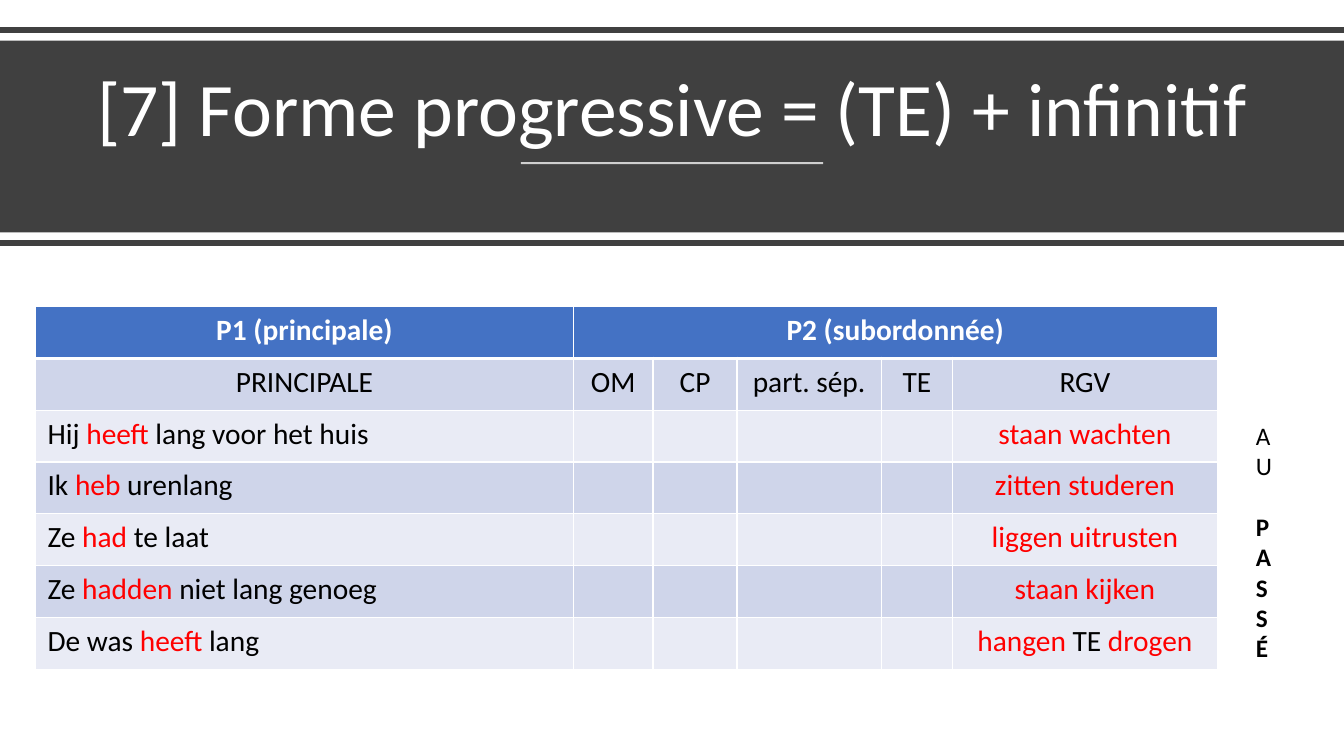
from lxml import etree
from pptx import Presentation
from pptx.dml.color import RGBColor
from pptx.enum import shapes, text
from pptx.oxml import ns
from pptx.util import Pt

FONT = "Calibri"
COLORS = {
    "white": "FFFFFF", "black": "000000", "dark": "404040", "red": "FF0000",
    "head": "4472C4", "odd": "CFD5EA", "even": "E9EBF5",
}
WIDTH, HEIGHT = 960, 540
COLS = [384, 57, 60, 103, 51, 189]
ROW = 37
HEADS = ["PRINCIPALE", "OM", "CP", "part. sép.", "TE", "RGV"]
# Words between asterisks are red.
PAIRS = [
    ("Hij *heeft* lang voor het huis", "*staan wachten*"),
    ("Ik *heb* urenlang", "*zitten studeren*"),
    ("Ze *had* te laat", "*liggen uitrusten*"),
    ("Ze *hadden* niet lang genoeg", "*staan kijken*"),
    ("De was *heeft* lang", "*hangen *TE *drogen*"),
]


def rgb(name):
    return RGBColor.from_string(COLORS[name])


def style(run, size, color, bold=False):
    font = run.font
    font.name, font.size, font.bold = FONT, Pt(size), bold
    font.color.rgb = rgb(color)


def add_band(slide, top, height):
    band = slide.shapes.add_shape(
        shapes.MSO_SHAPE.RECTANGLE, 0, Pt(top), Pt(WIDTH), Pt(height))
    band.shadow.inherit = False
    band.fill.solid()
    band.fill.fore_color.rgb = rgb("dark")
    band.line.fill.background()


def add_rule(slide, left, right, y, color, weight, alpha=None):
    """Draw a level line; alpha is its opacity in percent."""
    rule = slide.shapes.add_connector(
        shapes.MSO_CONNECTOR.STRAIGHT, Pt(left), Pt(y), Pt(right), Pt(y))
    rule.line.color.rgb = rgb(color)
    rule.line.width = Pt(weight)
    props = rule._element.spPr
    if alpha:
        tone = props.find(".//" + ns.qn("a:srgbClr"))
        etree.SubElement(tone, ns.qn("a:alpha"), val=str(alpha * 1000))
    etree.SubElement(props, ns.qn("a:effectLst"))


def add_text(slide, box, lines):
    """Add a text box; each line is (words, size, color, bold)."""
    frame = slide.shapes.add_textbox(*map(Pt, box)).text_frame
    frame.word_wrap = True
    frame.text = "\n".join(line[0] for line in lines)
    for para, line in zip(frame.paragraphs, lines):
        style(para.runs[0], *line[1:])
    return frame


def set_edges(cell, base):
    props = cell._tc.get_or_add_tcPr()
    for side, weight in zip("LRTB", (1, 1, 1, base)):
        edge = etree.SubElement(
            props, ns.qn("a:ln" + side), w=str(Pt(weight)))
        fill = etree.SubElement(edge, ns.qn("a:solidFill"))
        etree.SubElement(fill, ns.qn("a:srgbClr"), val=COLORS["white"])


def fill_cell(cell, words, row, col):
    head = row == 0
    set_edges(cell, 3 if head else 1)
    cell.fill.solid()
    cell.fill.fore_color.rgb = rgb(
        "head" if head else "odd" if row % 2 else "even")
    cell.margin_left = cell.margin_right = Pt(8.5)
    cell.margin_top = cell.margin_bottom = Pt(4.25)
    para = cell.text_frame.paragraphs[0]
    left = col == 0 and row > 1
    para.alignment = text.PP_ALIGN.LEFT if left else text.PP_ALIGN.CENTER
    plain = "white" if head else "black"
    for i, part in enumerate(words.split("*")):
        if part:
            run = para.add_run()
            run.text = part
            style(run, 21, "red" if i % 2 else plain, head)


def add_grid(slide, left, top):
    rows = [["P1 (principale)", "P2 (subordonnée)", "", "", "", ""], HEADS]
    rows += [[main, "", "", "", "", verbs] for main, verbs in PAIRS]
    grid = slide.shapes.add_table(
        len(rows), len(COLS), Pt(left), Pt(top),
        Pt(sum(COLS)), Pt(ROW * len(rows))).table
    for col, width in zip(grid.columns, COLS):
        col.width = Pt(width)
    for r, row in enumerate(rows):
        grid.rows[r].height = Pt(ROW)
        for c, words in enumerate(row):
            fill_cell(grid.cell(r, c), words, r, c)
    grid.cell(0, 1).merge(grid.cell(0, len(COLS) - 1))


def main():
    deck = Presentation()
    deck.slide_width, deck.slide_height = Pt(WIDTH), Pt(HEIGHT)
    slide = deck.slides.add_slide(deck.slide_layouts[6])

    add_rule(slide, 0, WIDTH, 21.5, "dark", 4)
    add_band(slide, 29, 137)
    title = add_text(slide, (41.5, 39, 877, 73.5), [
        ("[7] Forme progressive = (TE) + infinitif", 54, "white", False)])
    title.vertical_anchor = text.MSO_ANCHOR.BOTTOM
    title.paragraphs[0].alignment = text.PP_ALIGN.CENTER
    title.paragraphs[0].line_spacing = 0.9
    add_rule(slide, 372, 588, 116.5, "white", 1.5, 75)
    add_rule(slide, 0, WIDTH, 173.5, "dark", 4)

    add_grid(slide, 25.5, 219)
    # The narrow box stacks the letters one to a line.
    tense = add_text(slide, (890, 296.5, 16.5, 181.5), [
        ("AU", 18, "black", False), ("PASSÉ", 18, "black", True)])
    tense.paragraphs[1].space_before = Pt(22)

    deck.save("out.pptx")


if __name__ == "__main__":
    main()
